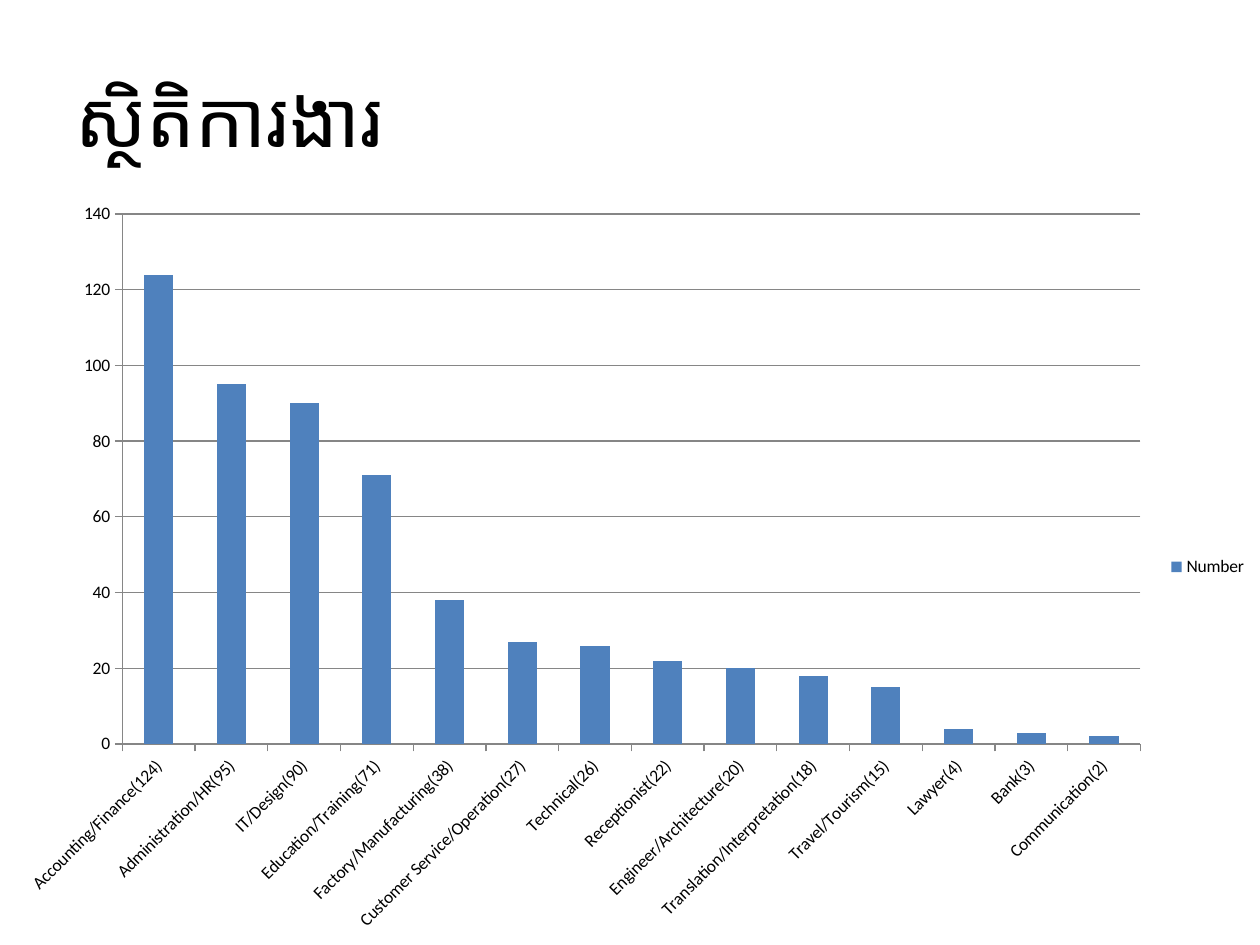
from pptx import Presentation
from pptx.chart.data import CategoryChartData
from pptx.dml.color import RGBColor
from pptx.enum.chart import XL_CHART_TYPE, XL_LEGEND_POSITION, XL_TICK_MARK
from pptx.enum.text import MSO_ANCHOR
from pptx.oxml.ns import qn
from pptx.util import Pt

COLUMN = XL_CHART_TYPE.COLUMN_CLUSTERED
RIGHT = XL_LEGEND_POSITION.RIGHT
OUTSIDE, NONE = XL_TICK_MARK.OUTSIDE, XL_TICK_MARK.NONE
MIDDLE = MSO_ANCHOR.MIDDLE

BLACK = RGBColor(0x00, 0x00, 0x00)
BLUE = RGBColor(0x4F, 0x81, 0xBD)
GREY = RGBColor(0x86, 0x86, 0x86)
FONT = "Calibri"

TITLE = "ស្ថិតិការងារ"
JOBS = [
    ("Accounting/Finance", 124),
    ("Administration/HR", 95),
    ("IT/Design", 90),
    ("Education/Training", 71),
    ("Factory/Manufacturing", 38),
    ("Customer Service/Operation", 27),
    ("Technical", 26),
    ("Receptionist", 22),
    ("Engineer/Architecture", 20),
    ("Translation/Interpretation", 18),
    ("Travel/Tourism", 15),
    ("Lawyer", 4),
    ("Bank", 3),
    ("Communication", 2),
]


def style(font, size, color=BLACK):
    font.name, font.size = FONT, Pt(size)
    font.color.rgb = color


def add_text(slide, text, box, size=18, color=BLACK, anchor=MIDDLE):
    frame = slide.shapes.add_textbox(*map(Pt, box)).text_frame
    frame.word_wrap = True
    frame.vertical_anchor = anchor
    run = frame.paragraphs[0].add_run()
    run.text = text
    style(run.font, size, color)


def add_bars(slide, jobs, box):
    data = CategoryChartData()
    data.categories = [f"{job}({count})" for job, count in jobs]
    data.add_series("Number", [count for _, count in jobs])
    chart = slide.shapes.add_chart(COLUMN, *map(Pt, box), data).chart
    style(chart.font, 10)
    chart.has_title = False
    chart.has_legend = True
    chart.legend.position = RIGHT
    chart.legend.include_in_layout = False

    plot = chart.plots[0]
    plot.vary_by_categories = False
    plot.gap_width = 150
    fill = plot.series[0].format.fill
    fill.solid()
    fill.fore_color.rgb = BLUE

    cats, vals = chart.category_axis, chart.value_axis
    vals.minimum_scale, vals.maximum_scale, vals.major_unit = 0, 140, 20
    vals.has_major_gridlines = True
    for axis in (cats, vals):
        axis.major_tick_mark, axis.minor_tick_mark = OUTSIDE, NONE
    for part in (cats, vals, vals.major_gridlines):
        part.format.line.color.rgb = GREY
        part.format.line.width = Pt(0.75)
    style(cats.tick_labels.font, 10)
    body = cats._element.find(qn("c:txPr")).find(qn("a:bodyPr"))
    body.set("rot", str(-45 * 60000))
    body.set("vert", "horz")


def main():
    deck = Presentation()
    deck.slide_width, deck.slide_height = Pt(720), Pt(540)
    slide = deck.slides.add_slide(deck.slide_layouts[6])
    add_text(slide, TITLE, (36, 21.6, 648, 90), size=44)
    add_bars(slide, JOBS, (2, 108, 718, 432))
    deck.save("out.pptx")


if __name__ == "__main__":
    main()
